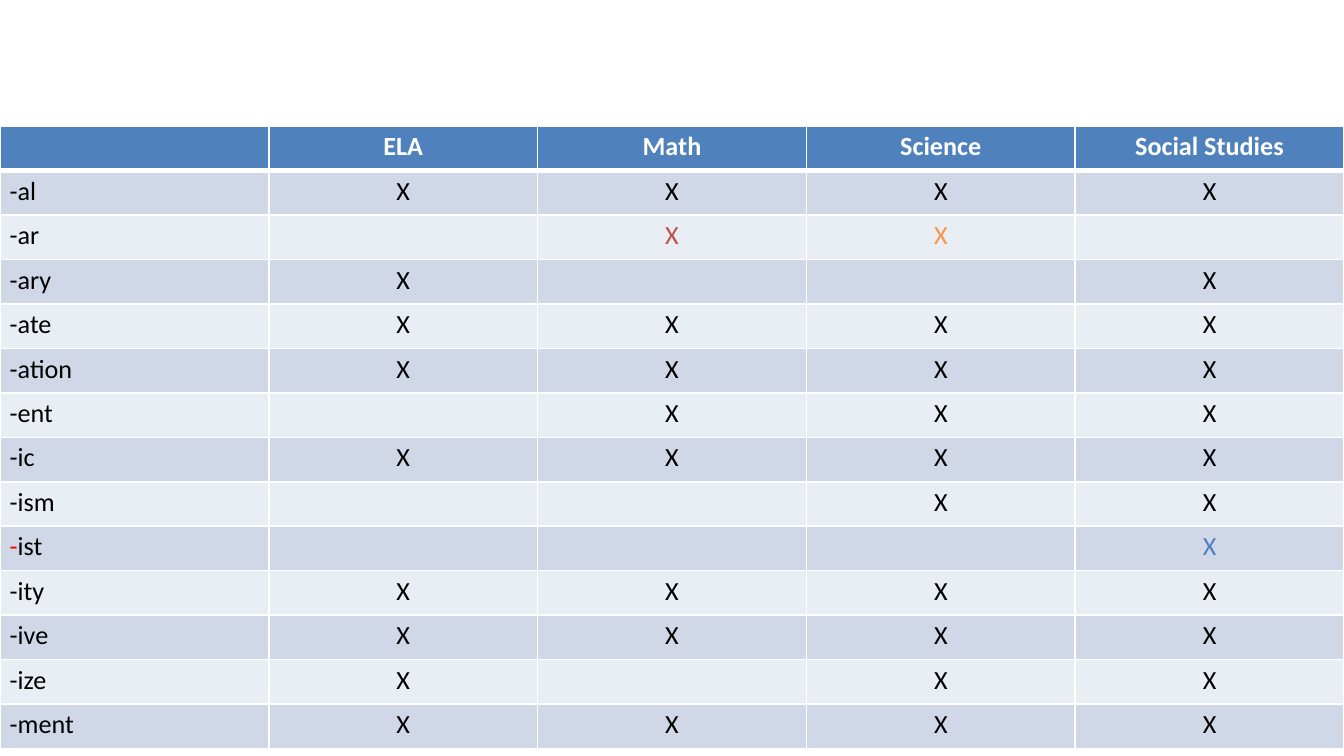
from lxml import etree
from pptx import Presentation
from pptx.dml.color import RGBColor
from pptx.enum import text
from pptx.oxml import ns
from pptx.util import Pt

HEADS = ["", "ELA", "Math", "Science", "Social Studies"]
# One letter per subject: X black, R red, O orange, B blue, "." no mark
MARKS = {
    "-al": "XXXX",
    "-ar": ".RO.",
    "-ary": "X..X",
    "-ate": "XXXX",
    "-ation": "XXXX",
    "-ent": ".XXX",
    "-ic": "XXXX",
    "-ism": "..XX",
    "-ist": "...B",
    "-ity": "XXXX",
    "-ive": "XXXX",
    "-ize": "X.XX",
    "-ment": "XXXX",
}
INKS = {"X": "000000", "R": "C0504D", "O": "F79646", "B": "4F81BD"}
BANDS = ["D0D8E8", "E9EDF4"]


def color(code):
    return RGBColor.from_string(code)


def write(frame, runs, font="Calibri", size=14, bold=False, center=False):
    """Fill a frame with one paragraph of (text, colour) runs."""
    para = frame.paragraphs[0]
    para.alignment = text.PP_ALIGN.CENTER if center else text.PP_ALIGN.LEFT
    for words, ink in runs:
        run = para.add_run()
        run.text = words
        run.font.name = font
        run.font.size = Pt(size)
        run.font.bold = bold
        run.font.color.rgb = color(ink)
    if not runs:  # an empty cell takes its height from the end mark
        end = etree.SubElement(para._p, ns.qn("a:endParaRPr"))
        end.set("sz", str(size * 100))


def border(cell, top=1, bottom=1, ink="FFFFFF"):
    props = cell._tc.get_or_add_tcPr()
    for side, width in (("L", 1), ("R", 1), ("T", top), ("B", bottom)):
        line = etree.SubElement(props, ns.qn(f"a:ln{side}"), w=str(Pt(width)))
        fill = etree.SubElement(line, ns.qn("a:solidFill"))
        etree.SubElement(fill, ns.qn("a:srgbClr"), val=ink)


class Deck:
    head = "4F81BD"
    light = "FFFFFF"

    def __init__(self, width, height):
        self.show = Presentation()
        self.show.slide_width, self.show.slide_height = Pt(width), Pt(height)
        self.slide = self.show.slides.add_slide(self.show.slide_layouts[6])

    def cell(self, cell, runs, fill, top=1, bottom=1, **style):
        cell.margin_left = cell.margin_right = Pt(5.2)
        cell.margin_top = cell.margin_bottom = Pt(2.6)
        border(cell, top, bottom)
        cell.fill.solid()
        cell.fill.fore_color.rgb = color(fill)
        write(cell.text_frame, runs, **style)

    def table(self, left, top, width, height):
        rows, cols = len(MARKS) + 1, len(HEADS)
        grid = self.slide.shapes.add_table(
            rows, cols, Pt(left), Pt(top), Pt(width), Pt(height)).table
        grid.horz_banding = False
        for row in grid.rows:
            row.height = Pt(height / rows)
        for col, name in enumerate(HEADS):
            runs = [(name, self.light)] if name else []
            self.cell(grid.cell(0, col), runs, self.head, bottom=3,
                      bold=True, center=True)
        for row, (suffix, marks) in enumerate(MARKS.items(), 1):
            fill = BANDS[(row - 1) % 2]
            edge = 3 if row == 1 else 1
            dash = "FF0000" if suffix == "-ist" else INKS["X"]
            label = [(suffix[0], dash), (suffix[1:], INKS["X"])]
            if dash == INKS["X"]:
                label = [(suffix, dash)]
            self.cell(grid.cell(row, 0), label, fill, top=edge)
            for col, mark in enumerate(marks, 1):
                runs = [("X", INKS[mark])] if mark in INKS else []
                self.cell(grid.cell(row, col), runs, fill, top=edge,
                          center=True)


def main():
    deck = Deck(720, 405)
    deck.table(0, 67.6, 720, 333.4)
    deck.show.save("out.pptx")


if __name__ == "__main__":
    main()
